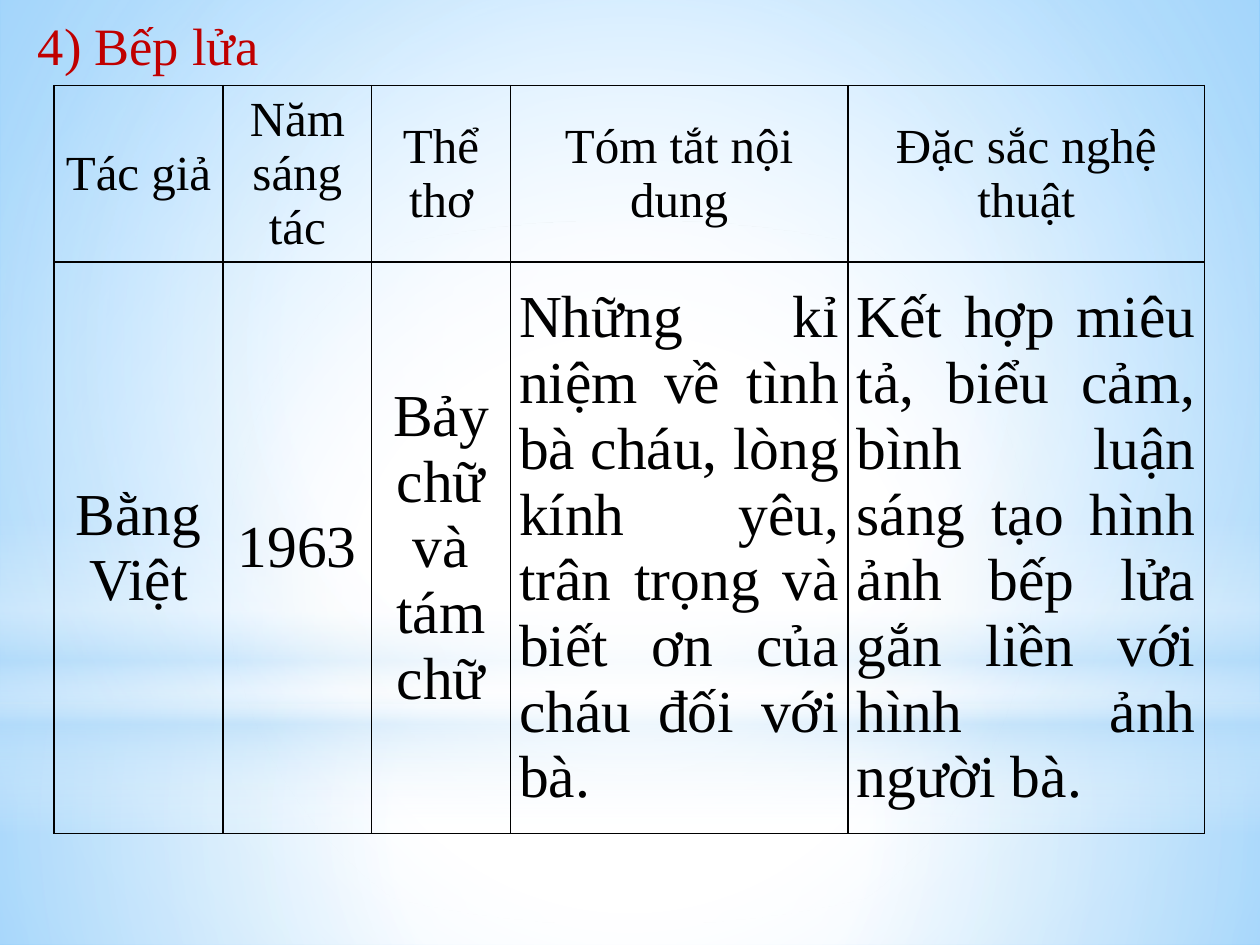
from pptx import Presentation
from pptx.dml.color import RGBColor
from pptx.enum.shapes import MSO_SHAPE as Shape
from pptx.enum.text import MSO_ANCHOR as Anchor, MSO_AUTO_SIZE as AutoSize, PP_ALIGN as Align
from pptx.oxml import parse_xml
from pptx.oxml.ns import nsdecls, qn
from pptx.util import Inches, Pt

# Content
TITLE = "4) Bếp lửa"
HEADER = ["Tác giả", "Năm sáng tác", "Thể thơ", "Tóm tắt nội dung", "Đặc sắc nghệ thuật"]
POEM = [
    "Bằng Việt",
    "1963",
    "Bảy chữ và tám chữ",
    "Những kỉ niệm về tình bà cháu, lòng kính yêu, trân trọng và biết ơn của cháu đối với bà.",
    "Kết hợp miêu tả, biểu cảm, bình luận sáng tạo hình ảnh bếp lửa gắn liền với hình ảnh người bà.",
]
COLUMN_WIDTHS = [1.34, 1.18, 1.1, 2.68, 2.83]
ROWS = [  # texts, height, text size, alignment per column
    (HEADER, 1.4, 28, [Align.CENTER] * 5),
    (POEM, 4.53, 34, [Align.CENTER] * 3 + [Align.JUSTIFY] * 2),
]

# Look: gradient stops are (position, colour, opacity), all in percent
FONT, INK, RED = "Times New Roman", "000000", "C00000"
WHITE, PALE, SKY = "FFFFFF", "B4DCFA", "63BCFF"
CENTRE = (50, 50, 50, 50)
BACKDROP = [(0, WHITE, 100), (36, WHITE, 100), (100, SKY, 100)]
GLOWS = [  # shape, top, height, stops, focus (None for a vertical gradient)
    (Shape.RECTANGLE, 5.58, 1.92, [(0, WHITE, 91), (37, WHITE, 76), (100, PALE, 79)], CENTRE),
    (Shape.RECTANGLE, 0, 5.58, [(0, WHITE, 89), (48, WHITE, 62), (100, PALE, 79)], CENTRE),
    (Shape.RECTANGLE, 4.12, 2.5, [(0, WHITE, 0), (29, WHITE, 30), (45, PALE, 40),
                                  (55, WHITE, 26), (65, PALE, 60), (100, WHITE, 0)], None),
    (Shape.OVAL, 1.75, 5.58, [(0, WHITE, 100), (56, WHITE, 0)], CENTRE),
]


def color(value):
    return RGBColor.from_string(value)


def paint(fill, element, stops, focus):
    """Give the fill inside element a gradient, circular around focus or vertical."""
    fill.gradient()
    marks = "".join(
        f'<a:gs pos="{pos * 1000}"><a:srgbClr val="{value}">'
        f'<a:alpha val="{opacity * 1000}"/></a:srgbClr></a:gs>'
        for pos, value, opacity in stops)
    shade = '<a:lin ang="5400000" scaled="0"/>'
    if focus:
        sides = " ".join(f'{side}="{share * 1000}"' for side, share in zip("ltrb", focus))
        shade = f'<a:path path="circle"><a:fillToRect {sides}/></a:path>'
    old = next(element.iter(qn("a:gradFill")))
    old.getparent().replace(old, parse_xml(
        f'<a:gradFill {nsdecls("a")} rotWithShape="1"><a:gsLst>{marks}</a:gsLst>{shade}</a:gradFill>'))


def write(para, text, size, value, align):
    para.alignment = align
    span = para.add_run()
    span.text = text
    span.font.name, span.font.size = FONT, Pt(size)
    span.font.color.rgb = color(value)


def outline(cell):
    for index, side in enumerate(("lnL", "lnR", "lnT", "lnB")):
        cell._tc.get_or_add_tcPr().insert(index, parse_xml(
            f'<a:{side} {nsdecls("a")} w="{Pt(1)}"><a:solidFill><a:srgbClr val="{INK}"/>'
            f'</a:solidFill></a:{side}>'))


deck = Presentation()
deck.slide_width, deck.slide_height = Inches(10), Inches(7.5)
page = deck.slides.add_slide(deck.slide_layouts[5])
title = page.shapes.title

# Background and soft glows, kept behind the title
paint(page.background.fill, page.element, BACKDROP, (24, 44, 24, 12))
for kind, top, height, stops, focus in GLOWS:
    glow = page.shapes.add_shape(kind, 0, Inches(top), deck.slide_width, Inches(height))
    glow.shadow.inherit = False
    glow.line.fill.background()
    paint(glow.fill, glow.element, stops, focus)
    title.element.addprevious(glow.element)

# Title
title.left, title.top, title.width, title.height = map(Inches, (0.2, 0.05, 1.97, 0.61))
frame = title.text_frame
frame.word_wrap, frame.auto_size = False, AutoSize.SHAPE_TO_FIT_TEXT
frame.vertical_anchor = Anchor.TOP
write(frame.paragraphs[0], TITLE, 30, RED, Align.LEFT)

# Table
table = page.shapes.add_table(
    len(ROWS), len(COLUMN_WIDTHS), Inches(0.43), Inches(0.68),
    Inches(sum(COLUMN_WIDTHS)), Inches(sum(row[1] for row in ROWS))).table
table.first_row = table.horz_banding = False
for column, width in zip(table.columns, COLUMN_WIDTHS):
    column.width = Inches(width)
for r, (texts, height, size, aligns) in enumerate(ROWS):
    table.rows[r].height = Inches(height)
    for c, (text, align) in enumerate(zip(texts, aligns)):
        cell = table.cell(r, c)
        cell.fill.background()
        outline(cell)
        cell.vertical_anchor = Anchor.MIDDLE
        cell.margin_left = cell.margin_right = Inches(0.07)
        cell.margin_top = cell.margin_bottom = 0
        write(cell.text_frame.paragraphs[0], text, size, INK, align)

deck.save("out.pptx")
